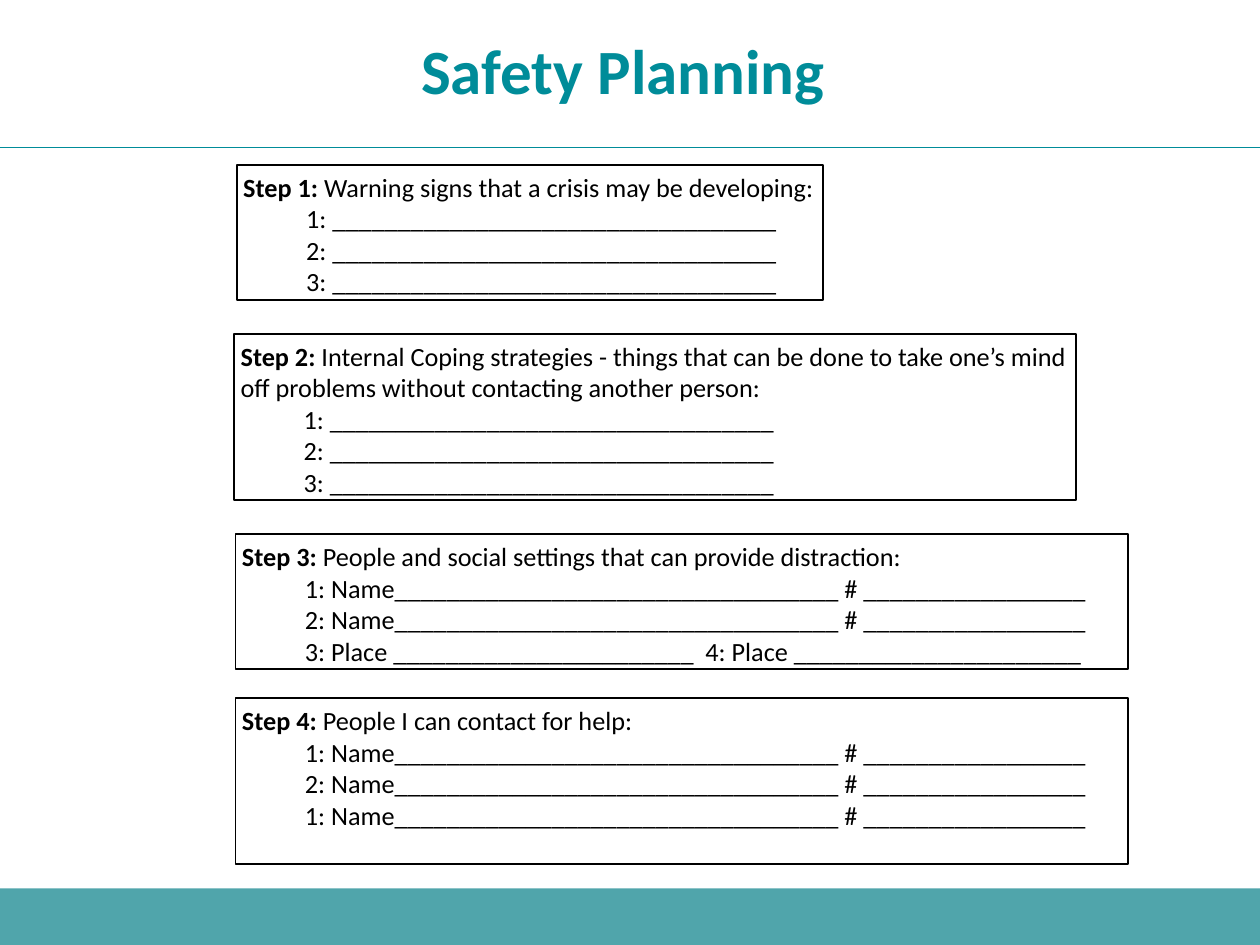
from dataclasses import dataclass

from lxml.etree import SubElement
from pptx import Presentation
from pptx.dml.color import RGBColor
from pptx.enum.shapes import MSO_CONNECTOR, MSO_SHAPE
from pptx.enum.text import MSO_ANCHOR, MSO_AUTO_SIZE, PP_ALIGN
from pptx.oxml.ns import qn
from pptx.slide import Slide
from pptx.util import Pt

EMU_PER_PX = 9144
SLIDE_WIDTH, SLIDE_HEIGHT = 1000, 750
HEADER_HEIGHT = 117
FOOTER_HEIGHT = 45
INSET = 5
ANSWER_INDENT = 50

COLORS = {"heading": "008C99", "footer": "50A5AB", "text": "000000"}

HEADING_FONT = {"name": "Calibri", "size": Pt(36), "bold": True}
LABEL_FONT = {"name": "Calibri", "size": Pt(15), "bold": True}
BODY_FONT = {"name": "Calibri", "size": Pt(15), "bold": False}
FRAME_FORMAT = {
    "word_wrap": True,
    "auto_size": MSO_AUTO_SIZE.NONE,
    "margin_left": INSET * EMU_PER_PX,
    "margin_top": INSET * EMU_PER_PX,
    "margin_right": INSET * EMU_PER_PX,
    "margin_bottom": INSET * EMU_PER_PX,
}

BLANK = "_" * 34
BLANK_ANSWERS = tuple(f"{number}: {BLANK}" for number in (1, 2, 3))


def contact(number: int) -> str:
    return f"{number}: Name{BLANK} # {'_' * 17}"


@dataclass(frozen=True)
class Step:
    left: int
    top: int
    width: int
    height: int
    prompt: tuple[str, ...]
    answers: tuple[str, ...]


STEPS = (
    Step(188, 131, 465, 107, ("Warning signs that a crisis may be developing:",), BLANK_ANSWERS),
    Step(
        186, 265, 668, 132,
        (
            "Internal Coping strategies - things that can be done to take one’s mind",
            "off problems without contacting another person:",
        ),
        BLANK_ANSWERS,
    ),
    Step(
        187, 424, 708, 107,
        ("People and social settings that can provide distraction:",),
        (contact(1), contact(2), f"3: Place {'_' * 23}  4: Place {'_' * 22}"),
    ),
    Step(
        187, 554, 708, 132,
        ("People I can contact for help:",),
        (contact(1), contact(2), contact(1)),
    ),
)


def px(*lengths: int) -> tuple[int, ...]:
    return tuple(length * EMU_PER_PX for length in lengths)


def color(name: str) -> RGBColor:
    return RGBColor.from_string(COLORS[name])


def apply_format(target, values: dict) -> None:
    for attribute, value in values.items():
        setattr(target, attribute, value)


def add_text(paragraph, text: str, font: dict, color_name: str = "text") -> None:
    run = paragraph.add_run()
    run.text = text
    apply_format(run.font, font)
    run.font.color.rgb = color(color_name)


def draw_footer(slide: Slide) -> None:
    band = slide.shapes.add_shape(
        MSO_SHAPE.RECTANGLE,
        *px(0, SLIDE_HEIGHT - FOOTER_HEIGHT, SLIDE_WIDTH, FOOTER_HEIGHT),
    )
    band.shadow.inherit = False
    band.fill.solid()
    band.fill.fore_color.rgb = color("footer")
    band.line.fill.background()


def draw_header(slide: Slide) -> None:
    rule = slide.shapes.add_connector(
        MSO_CONNECTOR.STRAIGHT, *px(0, HEADER_HEIGHT, SLIDE_WIDTH, HEADER_HEIGHT)
    )
    rule.line.color.rgb = color("heading")
    rule.line.width = Pt(0.5)
    SubElement(rule._element.spPr, qn("a:effectLst"))

    title = slide.shapes.title
    left, top, width, height = px(0, 0, SLIDE_WIDTH, HEADER_HEIGHT)
    apply_format(title, {"left": left, "top": top, "width": width, "height": height})
    frame = title.text_frame
    apply_format(frame, FRAME_FORMAT | {"vertical_anchor": MSO_ANCHOR.MIDDLE})
    paragraph = frame.paragraphs[0]
    apply_format(paragraph, {"alignment": PP_ALIGN.CENTER, "line_spacing": 0.9})
    add_text(paragraph, "Safety Planning ", HEADING_FONT, "heading")


def draw_step(slide: Slide, number: int, step: Step) -> None:
    box = slide.shapes.add_shape(
        MSO_SHAPE.RECTANGLE, *px(step.left, step.top, step.width, step.height)
    )
    box.shadow.inherit = False
    box.fill.background()
    box.line.color.rgb = color("text")
    box.line.width = Pt(1)

    frame = box.text_frame
    apply_format(frame, FRAME_FORMAT | {"vertical_anchor": MSO_ANCHOR.TOP})
    first_line, *other_lines = step.prompt
    paragraph = frame.paragraphs[0]
    paragraph.alignment = PP_ALIGN.LEFT
    add_text(paragraph, f"Step {number}:", LABEL_FONT)
    add_text(paragraph, f" {first_line}", BODY_FONT)

    lines = [(0, line) for line in other_lines] + [(1, line) for line in step.answers]
    for level, line in lines:
        paragraph = frame.add_paragraph()
        apply_format(paragraph, {"alignment": PP_ALIGN.LEFT, "level": level})
        properties = paragraph._p.get_or_add_pPr()
        properties.set("marL", str(level * ANSWER_INDENT * EMU_PER_PX))
        properties.set("indent", "0")
        add_text(paragraph, line, BODY_FONT)


def main() -> None:
    presentation = Presentation()
    presentation.slide_width, presentation.slide_height = px(SLIDE_WIDTH, SLIDE_HEIGHT)
    slide = presentation.slides.add_slide(presentation.slide_layouts[5])
    draw_footer(slide)
    draw_header(slide)
    for number, step in enumerate(STEPS, start=1):
        draw_step(slide, number, step)
    presentation.save("out.pptx")


if __name__ == "__main__":
    main()
